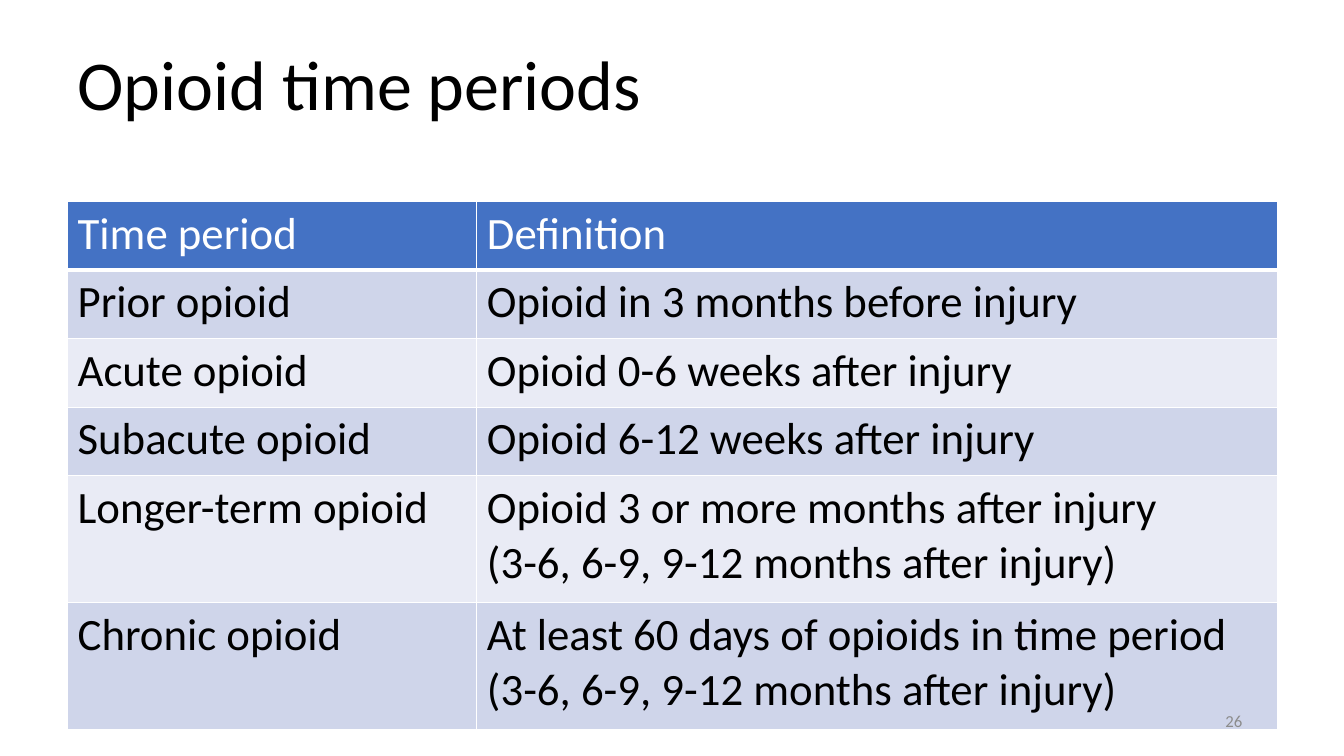
from lxml.etree import SubElement
from pptx import Presentation
from pptx.dml.color import RGBColor as RGB
from pptx.enum.text import MSO_ANCHOR as ANCHOR, PP_ALIGN as ALIGN
from pptx.oxml.ns import qn
from pptx.util import Inches, Pt

TITLE = "Opioid time periods"
PAGE_NUMBER = "26"
PERIODS = [
    ("Time period", "Definition"),
    ("Prior opioid", "Opioid in 3 months before injury"),
    ("Acute opioid", "Opioid 0-6 weeks after injury"),
    ("Subacute opioid", "Opioid 6-12 weeks after injury"),
    ("Longer-term opioid",
     "Opioid 3 or more months after injury\n(3-6, 6-9, 9-12 months after injury)"),
    ("Chronic opioid",
     "At least 60 days of opioids in time period (3-6, 6-9, 9-12 months after injury)"),
]
COL_WIDTHS = [4.06, 7.94]
ROW_HEIGHTS = [0.68] * 4 + [1.26] * 2
THEME = {
    "font": "Calibri",
    "title_size": 50, "table_size": 32, "number_size": 12,
    "text": "000000", "header_text": "FFFFFF", "number": "8C8C8C",
    "header": "4472C4", "bands": ["E9EBF5", "CFD5EA"],
    "border": "FFFFFF", "border_width": 1, "header_rule": 3,
}


def format_text(tf, size, color):
    for p in tf.paragraphs:
        for r in p.runs:
            r.font.name = THEME["font"]
            r.font.size = Pt(size)
            r.font.bold = False
            r.font.color.rgb = RGB.from_string(color)


def add_text(s, box, text, size, color, align=ALIGN.LEFT, spacing=1.0):
    tf = s.shapes.add_textbox(*map(Inches, box)).text_frame
    tf.word_wrap = True
    tf.vertical_anchor = ANCHOR.MIDDLE
    tf.text = text
    tf.paragraphs[0].alignment = align
    tf.paragraphs[0].line_spacing = spacing
    format_text(tf, size, color)


def add_borders(cell, bottom):
    tc_pr = cell._tc.get_or_add_tcPr()
    for side in "LRTB":
        width = bottom if side == "B" else THEME["border_width"]
        ln = SubElement(tc_pr, qn(f"a:ln{side}"), w=str(Pt(width)))
        fill = SubElement(ln, qn("a:solidFill"))
        SubElement(fill, qn("a:srgbClr"), val=THEME["border"])


def add_periods_table(s):
    box = (0.67, 2, sum(COL_WIDTHS), sum(ROW_HEIGHTS))
    table = s.shapes.add_table(len(PERIODS), len(COL_WIDTHS), *map(Inches, box)).table
    for col, width in zip(table.columns, COL_WIDTHS):
        col.width = Inches(width)
    for i, (row, texts) in enumerate(zip(table.rows, PERIODS)):
        row.height = Inches(ROW_HEIGHTS[i])
        header = i == 0
        fill = THEME["header"] if header else THEME["bands"][i % 2]
        color = THEME["header_text"] if header else THEME["text"]
        bottom = THEME["header_rule"] if header else THEME["border_width"]
        for cell, text in zip(row.cells, texts):
            cell.text_frame.text = text
            format_text(cell.text_frame, THEME["table_size"], color)
            add_borders(cell, bottom)
            cell.fill.solid()
            cell.fill.fore_color.rgb = RGB.from_string(fill)


def main():
    prs = Presentation()
    prs.slide_width, prs.slide_height = Inches(13.33), Inches(7.5)
    s = prs.slides.add_slide(prs.slide_layouts[6])
    add_text(s, (0.67, 0.37, 12, 1), TITLE, THEME["title_size"], THEME["text"], spacing=0.9)
    add_periods_table(s)
    add_text(s, (9.42, 6.95, 3, 0.4), PAGE_NUMBER, THEME["number_size"],
             THEME["number"], align=ALIGN.RIGHT)
    prs.save("out.pptx")


if __name__ == "__main__":
    main()
